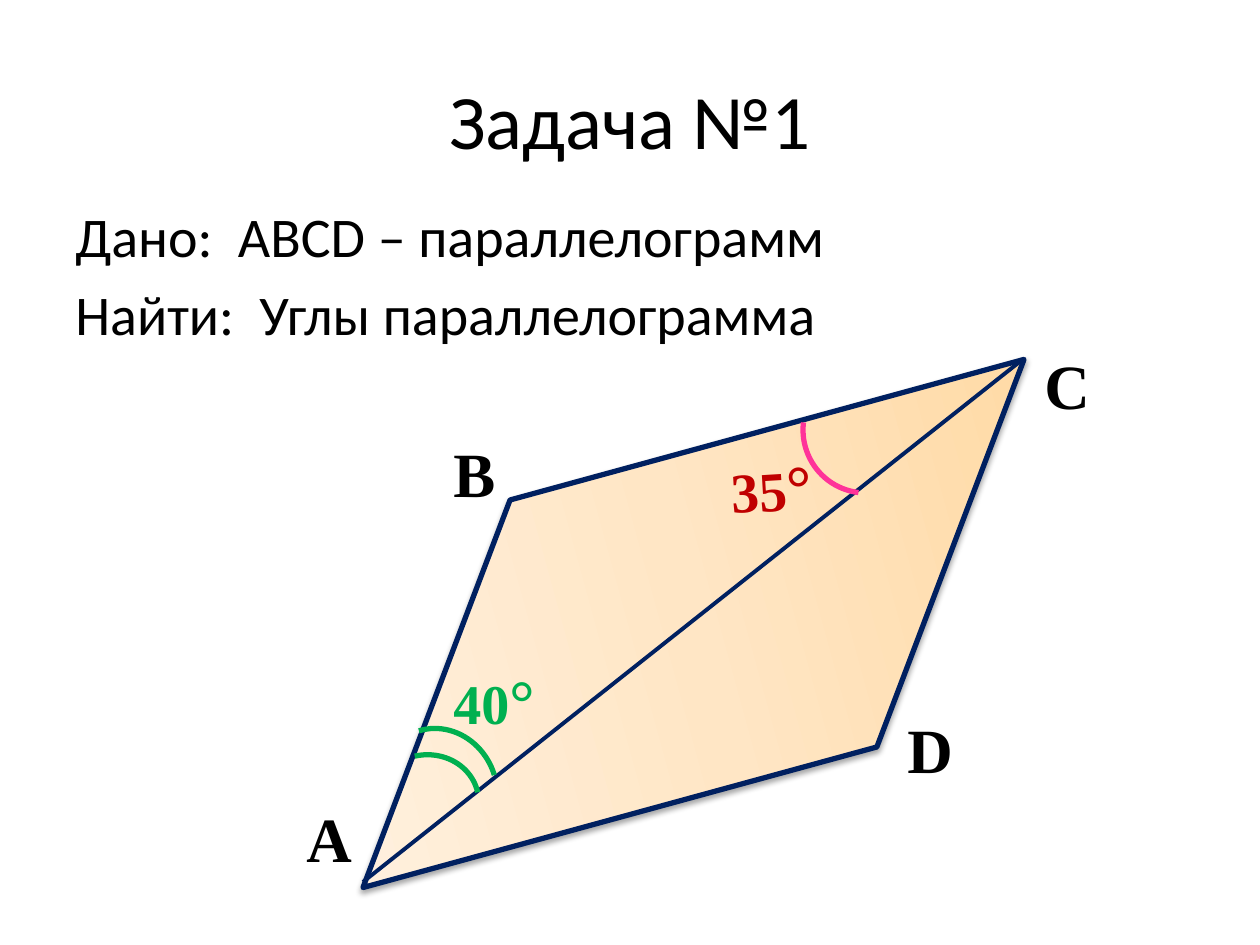
from lxml import etree
from pptx import Presentation
from pptx.dml.color import RGBColor
from pptx.enum.shapes import MSO_CONNECTOR, MSO_SHAPE
from pptx.enum.text import MSO_ANCHOR, MSO_AUTO_SIZE, PP_ALIGN
from pptx.oxml import parse_xml
from pptx.oxml.ns import nsdecls, qn
from pptx.util import Emu, Pt

PX = 914400 // 126
COLORS = {
    "text": "000000", "outline": "002060", "pink": "FF3399",
    "green": "00B050", "red": "C00000",
    "deep": "FFD8A0", "middle": "FFE6C5", "pale": "FFF2E3",
}
BODY_FONT = "Calibri"
LABEL_FONT = "Times New Roman"


def px(*lengths):
    return [Emu(length * PX) for length in lengths]


def rgb(name):
    return RGBColor.from_string(COLORS[name])


class GeometrySlide:
    def __init__(self, prs):
        self.slide = prs.slides.add_slide(prs.slide_layouts[5])
        self.figure = None

    def start_figure(self):
        self.figure = self.slide.shapes.add_group_shape().shapes

    def font(self, font, size, color="text", name=BODY_FONT, bold=False):
        font.name, font.size, font.bold = name, Pt(size), bold
        font.color.rgb = rgb(color)

    def stroke(self, line, color, width):
        line.color.rgb = rgb(color)
        line.width = Pt(width)

    def title(self, text, box):
        title = self.slide.shapes.title
        title.left, title.top, title.width, title.height = px(*box)
        title.text_frame.text = text
        title.text_frame.vertical_anchor = MSO_ANCHOR.MIDDLE
        heading = title.text_frame.paragraphs[0]
        heading.alignment = PP_ALIGN.CENTER
        self.font(heading.font, 44)

    def statement(self, lines, box):
        frame = self.slide.shapes.add_textbox(*px(*box)).text_frame
        frame.word_wrap = True
        frame.text = "\n".join(lines)
        for paragraph in frame.paragraphs:
            paragraph.space_before = Pt(6.4)
            self.font(paragraph.font, 32)

    def parallelogram(self, box, rotation, skew):
        shape = self.figure.add_shape(MSO_SHAPE.PARALLELOGRAM, *px(*box))
        shape.rotation = rotation
        shape.adjustments[0] = skew
        self.stroke(shape.line, "outline", 3)
        # Three-stop gradient, running from right to left
        shape.fill.gradient()
        shape.fill.gradient_angle = 180
        stops = shape._element.spPr.find(qn("a:gradFill")).find(qn("a:gsLst"))
        for stop in list(stops):
            stops.remove(stop)
        for position, color in ((0, "deep"), (50, "middle"), (100, "pale")):
            stops.append(parse_xml(
                f'<a:gs {nsdecls("a")} pos="{position * 1000}">'
                f'<a:srgbClr val="{COLORS[color]}"/></a:gs>'))
        # Soft shadow straight below
        shape._element.spPr.append(parse_xml(
            f'<a:effectLst {nsdecls("a")}><a:outerShdw blurRad="{Pt(3.1)}" '
            f'dist="{Pt(1.8)}" dir="5400000" rotWithShape="0">'
            f'<a:srgbClr val="{COLORS["text"]}"><a:alpha val="35000"/></a:srgbClr>'
            '</a:outerShdw></a:effectLst>'))

    def diagonal(self, start, end):
        line = self.figure.add_connector(MSO_CONNECTOR.STRAIGHT, *px(*start, *end))
        self.stroke(line.line, "outline", 2.25)
        etree.SubElement(line._element.spPr, qn("a:effectLst"))

    def arc(self, box, rotation, color):
        arc = self.figure.add_shape(MSO_SHAPE.ARC, *px(*box))
        arc.rotation = rotation
        arc.shadow.inherit = False
        arc.fill.background()
        self.stroke(arc.line, color, 3)

    def label(self, box, rotation=0):
        label = self.figure.add_textbox(*px(*box))
        label.rotation = rotation
        label.text_frame.word_wrap = True
        label.text_frame.auto_size = MSO_AUTO_SIZE.SHAPE_TO_FIT_TEXT
        return label.text_frame.paragraphs[0]

    def vertex(self, letter, box):
        paragraph = self.label(box)
        paragraph.text = letter
        self.font(paragraph.font, 36, name=LABEL_FONT, bold=True)

    def angle(self, degrees, box, color, rotation=0):
        paragraph = self.label(box, rotation)
        for text, size in ((degrees, 32), ("°", 36)):
            run = paragraph.add_run()
            run.text = text
            self.font(run.font, size, color, LABEL_FONT, True)


def main():
    prs = Presentation()
    prs.slide_width, prs.slide_height = px(1260, 945)
    problem = GeometrySlide(prs)

    # Problem statement
    problem.title("Задача №1", (63, 53, 1134, 132))
    problem.statement(
        ["Дано:  ABCD – параллелограмм", "Найти:  Углы параллелограмма"],
        (63, 195, 1134, 665))

    # Parallelogram with its diagonal
    problem.start_figure()
    problem.parallelogram((305, 456, 777, 335), 344.7, 0.729)
    problem.diagonal((363, 882), (1022, 360))

    # Angle marks
    problem.arc((803, 367, 126, 126), 186.9, "pink")
    problem.arc((372, 755, 107, 98), 347.4, "green")
    problem.arc((379, 728, 118, 129), 342.8, "green")
    problem.angle("40", (441, 655, 137, 89), "green")
    problem.angle("35", (718, 441, 146, 89), "red", 356.5)

    # Vertex letters
    for letter, left, top, width in (("D", 895, 704, 59), ("C", 1032, 340, 59),
                                     ("B", 441, 428, 54), ("A", 294, 793, 59)):
        problem.vertex(letter, (left, top, width, 89))

    prs.save("out.pptx")


if __name__ == "__main__":
    main()
